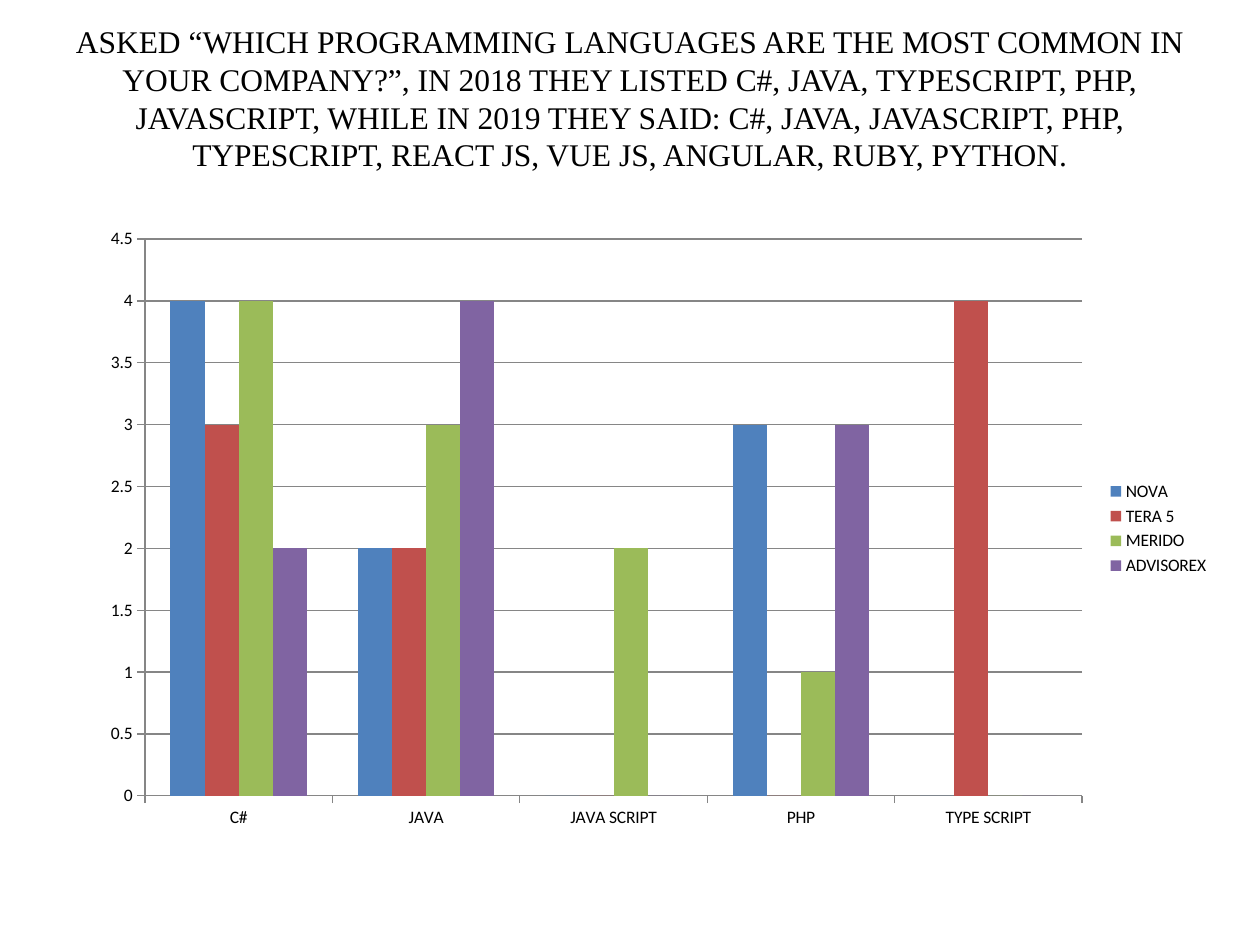
"""Build a slide with a survey title and a clustered column chart of programming languages."""
from pptx import Presentation
from pptx.chart.data import CategoryChartData
from pptx.dml.color import RGBColor
from pptx.enum.chart import XL_CHART_TYPE as CT, XL_LEGEND_POSITION as LP, XL_TICK_MARK as TM
from pptx.enum.text import MSO_ANCHOR, PP_ALIGN
from pptx.util import Pt

PX = 9144
BLACK = RGBColor(0x00, 0x00, 0x00)
GRAY = RGBColor(0x86, 0x86, 0x86)
BLUE = RGBColor(0x4F, 0x81, 0xBD)
RED = RGBColor(0xC0, 0x50, 0x4D)
GREEN = RGBColor(0x9B, 0xBB, 0x59)
PURPLE = RGBColor(0x80, 0x64, 0xA2)

CATEGORIES = ["C#", "JAVA", "JAVA SCRIPT", "PHP", "TYPE SCRIPT"]
SERIES = [
    ("NOVA", (4, 2, 0, 3, 0), BLUE),
    ("TERA 5", (3, 2, 0, 0, 4), RED),
    ("MERIDO", (4, 3, 2, 1, 0), GREEN),
    ("ADVISOREX", (2, 4, 0, 3, 0), PURPLE),
]


def add_text(tf, text, size=18, font="Times New Roman", color=BLACK, align=PP_ALIGN.CENTER):
    p = tf.paragraphs[0]
    p.alignment = align
    r = p.add_run()
    r.text = text
    r.font.size = Pt(size)
    r.font.name = font
    r.font.color.rgb = color


prs = Presentation()
prs.slide_width, prs.slide_height = 1000 * PX, 750 * PX
s = prs.slides.add_slide(prs.slide_layouts[5])

title = s.shapes.title
title.left, title.top, title.width, title.height = (v * PX for v in (50, 30, 900, 125))
tf = title.text_frame
tf.word_wrap = True
tf.vertical_anchor = MSO_ANCHOR.MIDDLE
tf.margin_bottom = 35 * PX
add_text(
    tf,
    "ASKED “WHICH PROGRAMMING LANGUAGES ARE THE MOST COMMON IN YOUR COMPANY?”, "
    "IN 2018 THEY LISTED C#, JAVA, TYPESCRIPT, PHP, JAVASCRIPT, WHILE IN 2019 THEY SAID: "
    "C#, JAVA, JAVASCRIPT, PHP, TYPESCRIPT, REACT JS, VUE JS, ANGULAR, RUBY, PYTHON.",
)

data = CategoryChartData()
data.categories = CATEGORIES
for name, values, _ in SERIES:
    data.add_series(name, values)
frame = s.shapes.add_chart(CT.COLUMN_CLUSTERED, *(v * PX for v in (70, 172, 900, 495)), data)
chart = frame.chart
chart.has_title = False
chart.has_legend = True
chart.legend.position = LP.RIGHT
chart.legend.include_in_layout = False

plot = chart.plots[0]
plot.vary_by_categories = False
plot.gap_width = 150
plot.overlap = 0
for series, (_, _, color) in zip(plot.series, SERIES):
    series.format.fill.solid()
    series.format.fill.fore_color.rgb = color

cat_axis, val_axis = chart.category_axis, chart.value_axis
for axis in (cat_axis, val_axis):
    axis.major_tick_mark = TM.OUTSIDE
    axis.minor_tick_mark = TM.NONE
    axis.format.line.color.rgb = GRAY
    axis.format.line.width = Pt(0.75)
val_axis.minimum_scale, val_axis.maximum_scale, val_axis.major_unit = 0, 4.5, 0.5
val_axis.tick_labels.number_format = "General"
val_axis.tick_labels.number_format_is_linked = False
val_axis.has_major_gridlines = True
val_axis.major_gridlines.format.line.color.rgb = GRAY
val_axis.major_gridlines.format.line.width = Pt(0.75)

for font in (chart.font, chart.legend.font, cat_axis.tick_labels.font, val_axis.tick_labels.font):
    font.name = "Calibri"
    font.size = Pt(10)
    font.color.rgb = BLACK

prs.save("out.pptx")
